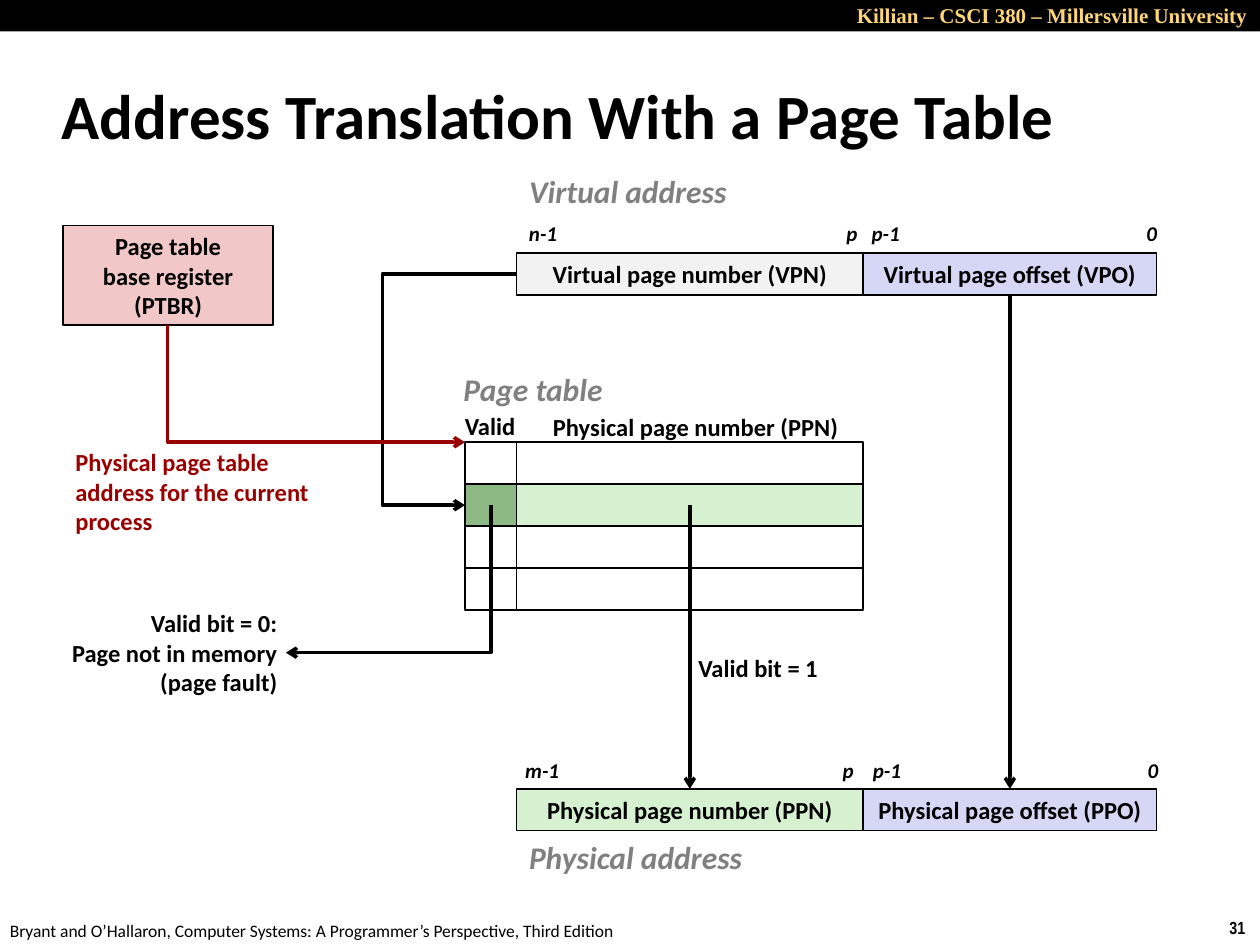
"""Build the slide on address translation with a page table."""
from lxml import etree
from pptx import Presentation
from pptx.dml.color import RGBColor
from pptx.enum.shapes import MSO_CONNECTOR, MSO_SHAPE
from pptx.enum.text import MSO_ANCHOR, MSO_AUTO_SIZE, PP_ALIGN
from pptx.oxml.ns import qn
from pptx.util import Inches, Pt

LEFT, CENTER, RIGHT = PP_ALIGN.LEFT, PP_ALIGN.CENTER, PP_ALIGN.RIGHT
MIDDLE, NO_FIT = MSO_ANCHOR.MIDDLE, MSO_AUTO_SIZE.NONE
STRAIGHT, ELBOW, RECT = MSO_CONNECTOR.STRAIGHT, MSO_CONNECTOR.ELBOW, MSO_SHAPE.RECTANGLE

BLACK, RED, GRAY = "000000", "990000", "808080"
PINK, PALE, BLUE, GREEN, DARK_GREEN = "F1C7C7", "F2F2F2", "D6D6F5", "D5F1CF", "8DBA84"

VALID_X, NUMBER_X, OFFSET_X, END_X = 3.69, 4.1, 6.85, 9.18
ROW_H, TABLE_Y, VIRTUAL_Y, PHYSICAL_Y = 0.333, 3.51, 2.01, 6.26
ENTRY_Y = TABLE_Y + 1.5 * ROW_H
VALID_MID = (VALID_X + NUMBER_X) / 2
NUMBER_MID = (NUMBER_X + OFFSET_X) / 2

BODY = {"name": "Calibri", "size": 14, "bold": True, "color": BLACK}
RED_BODY = BODY | {"color": RED}
HEADING = BODY | {"size": 18, "italic": True, "color": GRAY}
BIT = BODY | {"size": 12, "italic": True}
TITLE = BODY | {"size": 36}
FOOTER = BODY | {"size": 10, "bold": False}
NUMBER = BODY | {"name": "Arial Narrow", "size": 10}
COURSE = BODY | {"name": "Times New Roman", "size": 12, "color": "FFD579"}

ADDRESSES = [
    (VIRTUAL_Y, [("Virtual page number (VPN)", PALE), ("Virtual page offset (VPO)", BLUE)]),
    (PHYSICAL_Y, [("Physical page number (PPN)", GREEN), ("Physical page offset (PPO)", BLUE)]),
]
ENTRIES = [(None, None), (DARK_GREEN, GREEN), (None, None), (None, None)]
BITS = [
    (1.7, [("n-1", 4.1, 0.47), ("p", 6.62, 0.33), ("p-1", 6.82, 0.47), ("0", 9, 0.33)]),
    (5.96, [("m-1", 4.07, 0.51), ("p", 6.59, 0.33), ("p-1", 6.83, 0.47), ("0", 9.01, 0.33)]),
]
LABELS = [
    ("31", (9.66, 7.23, 0.34, 0.27), NUMBER, LEFT),
    ("Bryant and O’Hallaron, Computer Systems: A Programmer’s Perspective, Third Edition",
     (-0.02, 7.25, 5.08, 0.27), FOOTER, LEFT),
    ("Killian – CSCI 380 – Millersville University", (6.69, -0.03, 3.31, 0.3), COURSE, RIGHT),
    ("Virtual address", (NUMBER_X, 1.32, 1.78, 0.4), HEADING, LEFT),
    ("Physical address", (NUMBER_X, 6.6, 1.91, 0.4), HEADING, LEFT),
    ("Page table", (3.58, 2.89, 1.42, 0.4), HEADING, LEFT),
    ("Valid", (3.59, 3.21, 0.61, 0.34), BODY, LEFT),
    ("Physical page number (PPN)", (4.29, 3.22, 2.48, 0.34), BODY, LEFT),
    ("Physical page table\naddress for the current\nprocess", (0.5, 3.5, 2.08, 0.81), RED_BODY, LEFT),
    ("Valid bit = 0:\nPage not in memory\n(page fault)", (0.44, 4.78, 1.86, 0.81), BODY, RIGHT),
    ("Valid bit = 1", (5.42, 5.13, 1.17, 0.34), BODY, RIGHT),
]


def rgb(value):
    """Turn a hex string into a colour."""
    return RGBColor.from_string(value)


def write(sp, text, style, align):
    """Put formatted text into a shape."""
    tf = sp.text_frame
    tf.word_wrap = False
    tf.auto_size = NO_FIT
    tf.text = text
    for p in tf.paragraphs:
        p.alignment = align
        for r in p.runs:
            for key, value in style.items():
                if key == "color":
                    r.font.color.rgb = rgb(value)
                else:
                    setattr(r.font, key, Pt(value) if key == "size" else value)


def add_label(s, text, box, style, align):
    """Add a text box."""
    write(s.shapes.add_textbox(*map(Inches, box)), text, style, align)


def add_box(s, box, fill, text="", line=True):
    """Add a rectangle with optional fill, outline and centred text."""
    sp = s.shapes.add_shape(RECT, *map(Inches, box))
    sp.shadow.inherit = False
    if fill:
        sp.fill.solid()
        sp.fill.fore_color.rgb = rgb(fill)
    else:
        sp.fill.background()
    if line:
        sp.line.color.rgb = rgb(BLACK)
        sp.line.width = Pt(1)
    else:
        sp.line.fill.background()
    if text:
        write(sp, text, BODY, CENTER)
        sp.text_frame.vertical_anchor = MIDDLE
    return sp


def add_arrow(s, kind, start, end, color=BLACK):
    """Add a connector with an arrowhead at its end."""
    c = s.shapes.add_connector(kind, *map(Inches, start + end))
    c.line.color.rgb = rgb(color)
    c.line.width = Pt(2)
    etree.SubElement(c.line._get_or_add_ln(), qn("a:tailEnd"), type="arrow")
    etree.SubElement(c._element.spPr, qn("a:effectLst"))
    return c


def add_corner(s, start, end, turn, color=BLACK, flip=False):
    """Add an arrow that runs down and then sideways, as a turned one-bend connector."""
    (x1, y1), (x2, y2) = start, end
    mid_x, mid_y = (x1 + x2) / 2, (y1 + y2) / 2
    half_w, half_h = abs(y2 - y1) / 2, abs(x2 - x1) / 2
    c = add_arrow(s, ELBOW, (mid_x - half_w, mid_y - half_h), (mid_x + half_w, mid_y + half_h), color)
    xfrm = c._element.spPr.find(qn("a:xfrm"))
    xfrm.set("rot", str(turn * 60000))
    if flip:
        xfrm.set("flipH", "1")
    c._element.spPr.find(qn("a:prstGeom")).set("prst", "bentConnector2")


def main():
    """Lay out the slide and save it."""
    prs = Presentation()
    prs.slide_width, prs.slide_height = Inches(10), Inches(7.5)
    s = prs.slides.add_slide(prs.slide_layouts[5])
    title = s.shapes.title
    title.left, title.top, title.width, title.height = map(Inches, (0.39, 0.49, 8.3, 0.83))
    write(title, "Address Translation With a Page Table", TITLE, LEFT)
    title.text_frame.vertical_anchor = MIDDLE

    add_box(s, (0, 0, 10, 0.25), BLACK, line=False)
    columns = [(NUMBER_X, OFFSET_X - NUMBER_X), (OFFSET_X, END_X - OFFSET_X)]
    fields = [
        add_box(s, (x, y, w, ROW_H), fill, text)
        for y, parts in ADDRESSES
        for (x, w), (text, fill) in zip(columns, parts)
    ]
    columns = [(VALID_X, NUMBER_X - VALID_X), (NUMBER_X, OFFSET_X - NUMBER_X)]
    for row, fills in enumerate(ENTRIES):
        for (x, w), fill in zip(columns, fills):
            add_box(s, (x, TABLE_Y + row * ROW_H, w, ROW_H), fill)
    add_box(s, (0.5, 1.79, 1.67, 0.79), PINK, "Page table\vbase register\n(PTBR)")

    vpn_y = VIRTUAL_Y + ROW_H / 2
    c = add_arrow(s, ELBOW, (NUMBER_X, vpn_y), (VALID_X, ENTRY_Y))
    guides = c._element.spPr.find(qn("a:prstGeom")).get_or_add_avLst()
    etree.SubElement(guides, qn("a:gd"), name="adj1", fmla="val 260000")

    vpn, vpo, ppn, ppo = fields
    c = add_arrow(s, STRAIGHT, (8.02, VIRTUAL_Y + ROW_H), (8.02, PHYSICAL_Y))
    c.begin_connect(vpo, 2)
    c.end_connect(ppo, 0)
    c = add_arrow(s, STRAIGHT, (NUMBER_MID, ENTRY_Y), (NUMBER_MID, PHYSICAL_Y))
    c.end_connect(ppn, 0)
    add_corner(s, (VALID_MID, ENTRY_Y), (2.27, 5.18), 90)
    add_corner(s, (1.33, 2.58), (VALID_X, TABLE_Y), 270, RED, flip=True)

    for label in LABELS:
        add_label(s, *label)
    for y, bits in BITS:
        for text, x, w in bits:
            add_label(s, text, (x, y, w, 0.3), BIT, LEFT)
    prs.save("out.pptx")


if __name__ == "__main__":
    main()
